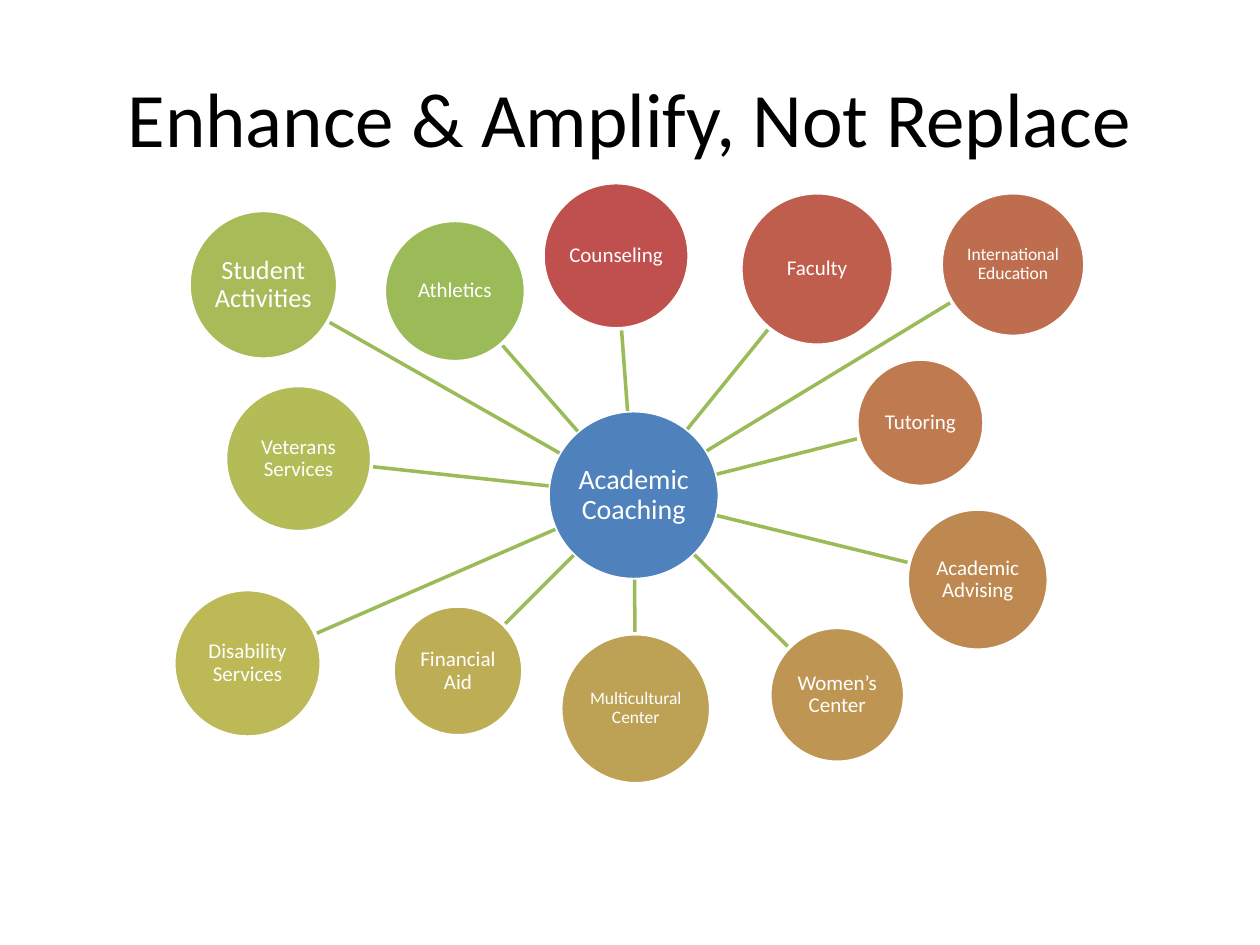
from dataclasses import dataclass
from math import hypot

from lxml.etree import SubElement
from pptx import Presentation
from pptx.dml.color import RGBColor
from pptx.enum.shapes import MSO_CONNECTOR as Connector, MSO_SHAPE as Shape
from pptx.enum.text import MSO_ANCHOR as Anchor, PP_ALIGN as Align
from pptx.oxml.ns import qn
from pptx.util import Inches, Pt

FONT = "Calibri"
BLACK = RGBColor(0x00, 0x00, 0x00)
WHITE = RGBColor(0xFF, 0xFF, 0xFF)
BLUE = RGBColor(0x4F, 0x81, 0xBD)
GREEN = RGBColor(0x9B, 0xBB, 0x59)


@dataclass(frozen=True)
class Bubble:
    label: str
    left: float
    top: float
    width: float
    height: float
    fill: RGBColor
    size: int = 12

    @property
    def center(self) -> tuple[float, float]:
        return self.left + self.width / 2, self.top + self.height / 2

    def edge_toward(self, other: "Bubble") -> tuple[float, float]:
        """Point on this outline on the straight line to the other's center."""
        x, y = self.center
        dx, dy = other.center[0] - x, other.center[1] - y
        reach = hypot(dx / (self.width / 2), dy / (self.height / 2))
        return x + dx / reach, y + dy / reach


def service(label: str, left: float, top: float, diameter: float,
            color: str, size: int = 12) -> Bubble:
    return Bubble(label, left, top, diameter, diameter,
                  RGBColor.from_string(color), size)


HUB = Bubble("Academic Coaching", 4.35, 3.26, 1.36, 1.34, BLUE, 16)
SERVICES = [
    service("Counseling", 4.31, 1.45, 1.16, "C0504D"),
    service("Faculty", 5.88, 1.53, 1.21, "C05E4E"),
    service("International Education", 7.47, 1.53, 1.14, "BF6D4F", 10),
    service("Tutoring", 6.8, 2.85, 1.01, "BF7A50"),
    service("Academic Advising", 7.2, 4.04, 1.12, "BE8851"),
    service("Women’s Center", 6.11, 4.98, 1.07, "BE9553"),
    service("Multicultural Center", 4.45, 5.03, 1.19, "BDA154", 10),
    service("Financial Aid", 3.12, 4.81, 1.03, "BDAE55"),
    service("Disability Services", 1.38, 4.68, 1.17, "BCB956"),
    service("Veterans Services", 1.79, 3.06, 1.16, "B3BC57"),
    service("Student Activities", 1.5, 1.67, 1.18, "A7BB58", 15),
    service("Athletics", 3.05, 1.75, 1.12, "9BBB59"),
]


def add_span(para, text: str, size: int, color: RGBColor) -> None:
    para.alignment = Align.CENTER
    span = para.add_run()
    span.text = text
    span.font.name = FONT
    span.font.size = Pt(size)
    span.font.color.rgb = color


def add_title(page, text: str) -> None:
    title = page.shapes.title
    title.left, title.top = Inches(0.5), Inches(0.3)
    title.width, title.height = Inches(9), Inches(1.25)
    title.text_frame.vertical_anchor = Anchor.MIDDLE
    add_span(title.text_frame.paragraphs[0], text, 44, BLACK)


def add_bubble(page, bubble: Bubble) -> None:
    circle = page.shapes.add_shape(
        Shape.OVAL, Inches(bubble.left), Inches(bubble.top),
        Inches(bubble.width), Inches(bubble.height))
    circle.shadow.inherit = False
    circle.fill.solid()
    circle.fill.fore_color.rgb = bubble.fill
    circle.line.color.rgb = WHITE
    circle.line.width = Pt(2)

    frame = circle.text_frame
    frame.word_wrap = True
    frame.vertical_anchor = Anchor.MIDDLE
    frame.margin_left = frame.margin_right = Inches(0.01)
    frame.margin_top = frame.margin_bottom = Inches(0.01)
    para = frame.paragraphs[0]
    para.line_spacing = 0.9
    add_span(para, bubble.label, bubble.size, WHITE)


def add_spoke(page, hub: Bubble, bubble: Bubble) -> None:
    ends = hub.edge_toward(bubble) + bubble.edge_toward(hub)
    spoke = page.shapes.add_connector(
        Connector.STRAIGHT, *(Inches(value) for value in ends))
    spoke.line.color.rgb = GREEN
    spoke.line.width = Pt(2)
    SubElement(spoke._element.spPr, qn("a:effectLst"))


def main() -> None:
    deck = Presentation()
    deck.slide_width, deck.slide_height = Inches(10), Inches(7.5)
    page = deck.slides.add_slide(deck.slide_layouts[5])
    add_title(page, "Enhance & Amplify, Not Replace")
    add_bubble(page, HUB)
    for bubble in SERVICES:
        add_spoke(page, HUB, bubble)
        add_bubble(page, bubble)
    deck.save("out.pptx")


if __name__ == "__main__":
    main()
